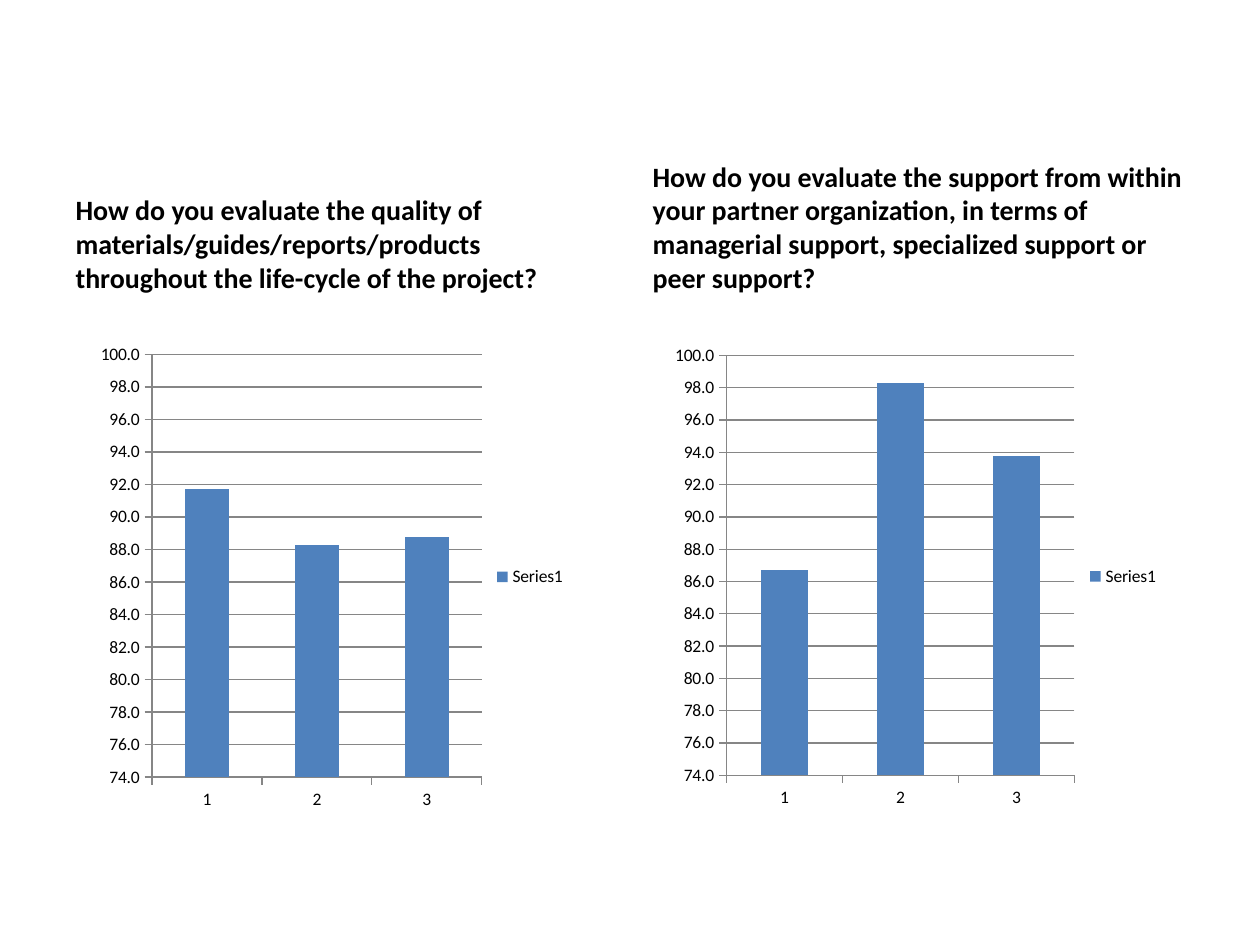
from pptx import Presentation
from pptx.chart.data import CategoryChartData
from pptx.dml.color import RGBColor
from pptx.enum.chart import XL_CHART_TYPE, XL_LEGEND_POSITION, XL_TICK_MARK
from pptx.enum.text import MSO_ANCHOR, MSO_AUTO_SIZE
from pptx.util import Emu, Pt

FONT = "Calibri"
BLACK, BLUE, GRAY = "000000", "4F81BD", "868686"


def px(n):
    return Emu(round(n * 914400 / 126))


def color(code):
    return RGBColor.from_string(code)


deck = Presentation()
deck.slide_width, deck.slide_height = px(1260), px(945)
slide = deck.slides.add_slide(deck.slide_layouts[4])  # Comparison
holders = {h.placeholder_format.idx: h for h in slide.placeholders}

# Placeholder index, heading, heading left, chart box, values
panels = [
    (1, "How do you evaluate the quality of materials/guides/reports/products "
        "throughout the life-cycle of the project?",
     63, (91, 335, 488, 484), (91.7, 88.3, 88.8)),
    (3, "How do you evaluate the support from within your partner organization, "
        "in terms of managerial support, specialized support or peer support?",
     640, (665, 336, 507, 481), (86.7, 98.3, 93.8)),
]

for idx, text, left, box, values in panels:
    # Heading
    head = holders[idx]
    head.left, head.top, head.width, head.height = map(px, (left, 212, 557, 88))
    frame = head.text_frame
    frame.text = text
    frame.word_wrap = True
    frame.auto_size = MSO_AUTO_SIZE.NONE
    frame.vertical_anchor = MSO_ANCHOR.BOTTOM
    para = frame.paragraphs[0]
    para.space_before = Pt(0)
    font = para.runs[0].font
    font.name, font.size, font.bold = FONT, Pt(16), True
    font.color.rgb = color(BLACK)

    # Column chart
    data = CategoryChartData(number_format="0.0")
    data.categories = ["1", "2", "3"]
    data.add_series("Series1", values)
    chart = slide.shapes.add_chart(
        XL_CHART_TYPE.COLUMN_CLUSTERED, *map(px, box), data).chart
    chart.has_title = False
    chart.font.name, chart.font.size = FONT, Pt(10)
    chart.font.color.rgb = color(BLACK)
    plot = chart.plots[0]
    plot.gap_width = 150
    plot.vary_by_categories = False
    fill = plot.series[0].format.fill
    fill.solid()
    fill.fore_color.rgb = color(BLUE)

    # Legend
    chart.has_legend = True
    chart.legend.position = XL_LEGEND_POSITION.RIGHT
    chart.legend.include_in_layout = False

    # Axes and grid
    scale = chart.value_axis
    scale.minimum_scale, scale.maximum_scale, scale.major_unit = 74, 100, 2
    scale.has_major_gridlines = True
    scale.tick_labels.number_format = "0.0"
    scale.tick_labels.number_format_is_linked = False
    for axis in (scale, chart.category_axis):
        axis.major_tick_mark = XL_TICK_MARK.OUTSIDE
        axis.minor_tick_mark = XL_TICK_MARK.NONE
    for part in (scale, scale.major_gridlines, chart.category_axis):
        part.format.line.color.rgb = color(GRAY)
        part.format.line.width = Pt(0.75)

# Unused placeholders
for idx in (0, 2, 4):
    item = holders[idx].element
    item.getparent().remove(item)

deck.save("out.pptx")
